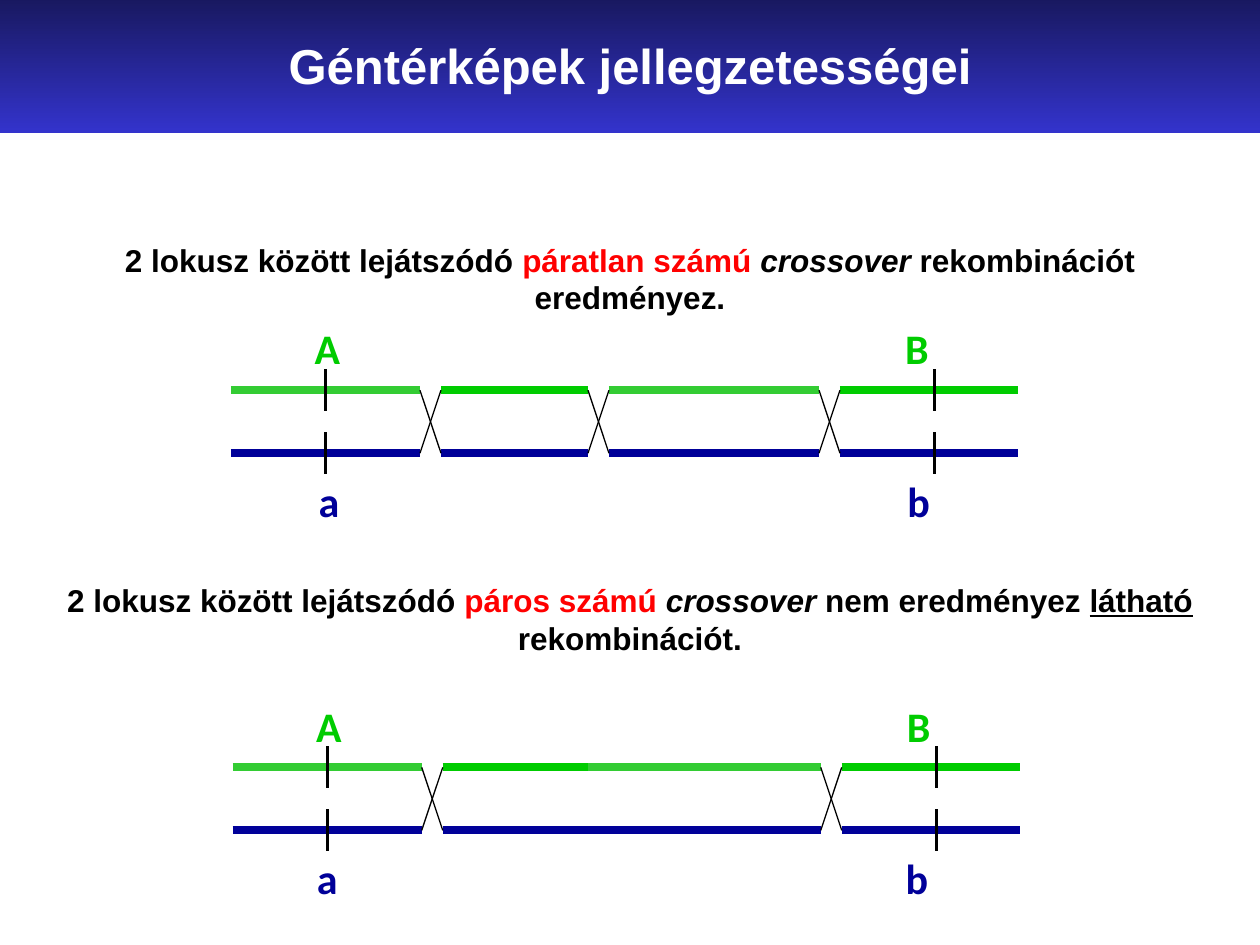
import itertools

import pptx
import pptx.dml.color
import pptx.enum.shapes
import pptx.enum.text
import pptx.oxml.ns
import pptx.util
from lxml import etree

Pt = pptx.util.Pt
ALIGN = pptx.enum.text.PP_ALIGN
ANCHOR = pptx.enum.text.MSO_ANCHOR
BLACK, WHITE, RED = "000000", "FFFFFF", "FF0000"
PALE, GREEN, BLUE = "33CC33", "00CC00", "000099"


def paint(target, code):
    target.rgb = pptx.dml.color.RGBColor.from_string(code)


def write(frame, *runs, font="Arial", size=18, color=BLACK, anchor=ANCHOR.TOP):
    """Fill a frame with one centred bold paragraph; a run is (text, format)."""
    frame.word_wrap = True
    frame.vertical_anchor = anchor
    para = frame.paragraphs[0]
    para.alignment = ALIGN.CENTER
    for text, look in runs:
        run = para.add_run()
        run.text = text
        run.font.name = font
        run.font.size = Pt(size)
        run.font.bold = True
        run.font.italic = look.get("italic", False)
        run.font.underline = look.get("underline", False)
        paint(run.font.color, look.get("color", color))


def box(slide, left, top, width, height, *runs, **look):
    shape = slide.shapes.add_textbox(Pt(left), Pt(top), Pt(width), Pt(height))
    write(shape.text_frame, *runs, **look)


def line(slide, x1, y1, x2, y2, color, width):
    link = slide.shapes.add_connector(
        pptx.enum.shapes.MSO_CONNECTOR.STRAIGHT, Pt(x1), Pt(y1), Pt(x2), Pt(y2))
    paint(link.line.color, color)
    link.line.width = Pt(width)
    etree.SubElement(link._element.spPr, pptx.oxml.ns.qn("a:effectLst"))


def header(slide, left, top, width, height, text):
    title = slide.shapes.title
    title.left, title.top = Pt(left), Pt(top)
    title.width, title.height = Pt(width), Pt(height)
    title.fill.gradient()
    title.fill.gradient_angle = 270
    for stop, code in zip(title.fill.gradient_stops, ("18185E", "3333CC")):
        paint(stop.color, code)
    write(title.text_frame, (text, {}), size=28, color=WHITE, anchor=ANCHOR.MIDDLE)


def strands(slide, left, top, spans, shift):
    """Draw two chromatids, crossed in each gap between spans; shift moves a and b."""
    gap, reach = 36, 12
    low = top + gap
    for (start, end), green in zip(spans, itertools.cycle((PALE, GREEN))):
        for y, color in ((top, green), (low, BLUE)):
            line(slide, left + start, y, left + end, y, color, 4.5)
    for (_, end), (start, _) in itertools.pairwise(spans):
        if start > end:
            for x1, x2 in ((start, end), (end, start)):
                line(slide, left + x1, top, left + x2, low, BLACK, 0.75)
    for x, y in itertools.product((54, 402), (top, low)):
        line(slide, left + x, y - reach, left + x, y + reach, BLACK, 1.5)
    rows = (("AB", top - 42, 0, GREEN), ("ab", top + 45, shift, BLUE))
    for names, y, move, color in rows:
        for name, x in zip(names, (55, 392)):
            box(slide, left + x + move - 18, y, 36, 36, (name, {}),
                font="Calibri", size=24, color=color)


def claim(slide, top, count, *rest):
    box(slide, 18, top, 684, 50, ("2 lokusz között lejátszódó ", {}),
        (count + " számú ", {"color": RED}), ("crossover", {"italic": True}), *rest)


def main():
    deck = pptx.Presentation()
    deck.slide_width, deck.slide_height = Pt(720), Pt(540)
    slide = deck.slides.add_slide(deck.slide_layouts[5])
    header(slide, 0, -2, 720, 78, "Géntérképek jellegzetességei")
    claim(slide, 134, "páratlan", (" rekombinációt eredményez.", {}))
    strands(slide, 132, 223, ((0, 108), (120, 204), (216, 336), (348, 450)), 1)
    claim(slide, 328.5, "páros", (" nem eredményez ", {}),
          ("látható", {"underline": True}), (" rekombinációt.", {}))
    strands(slide, 133, 438.5, ((0, 108), (120, 204), (203, 336), (348, 450)), -1)
    deck.save("out.pptx")


if __name__ == "__main__":
    main()
